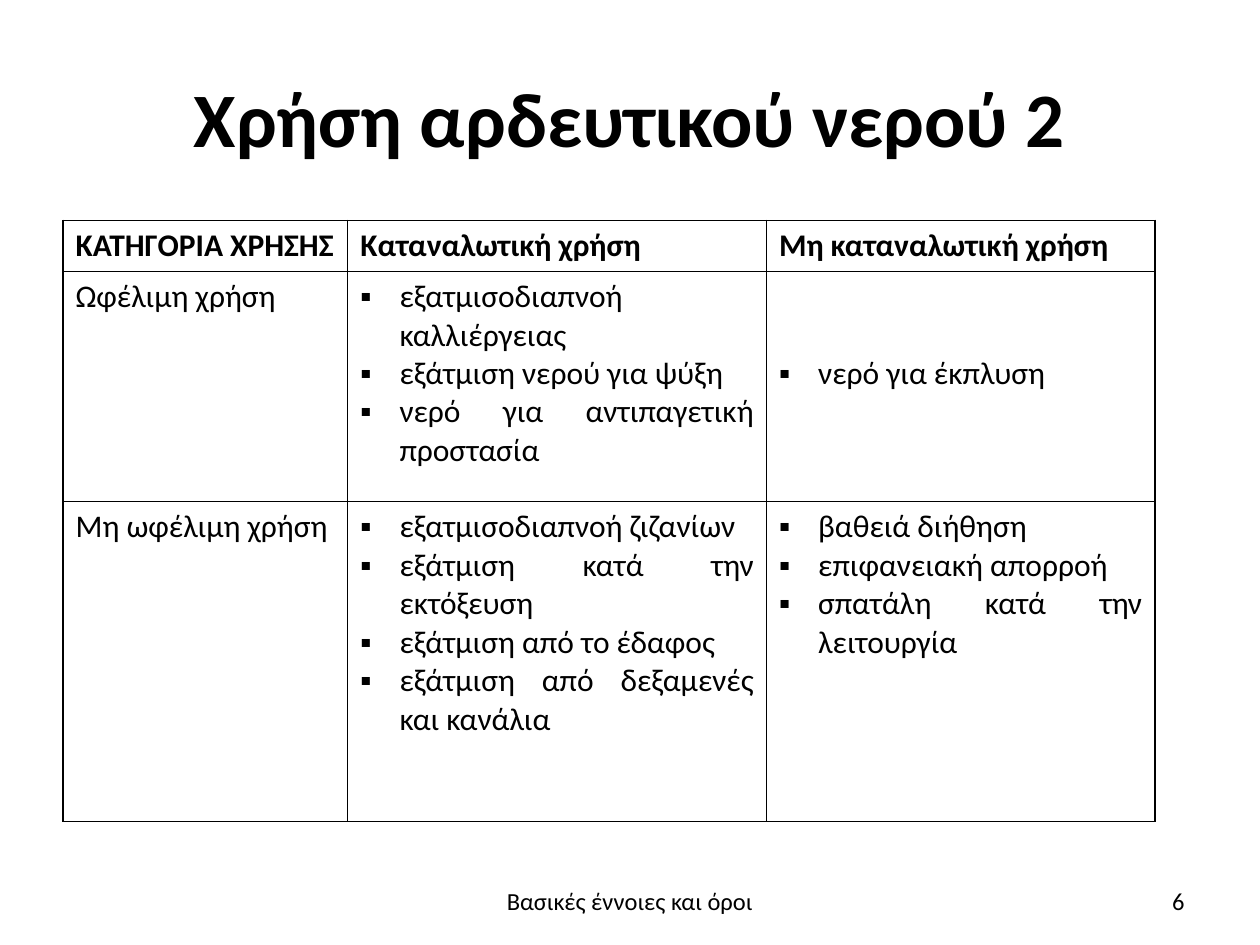
from lxml import etree
from pptx import Presentation
from pptx import util as u
from pptx.dml import color
from pptx.enum import text
from pptx.oxml import ns

ROWS = [
    [["ΚΑΤΗΓΟΡΙΑ ΧΡΗΣΗΣ"], ["Καταναλωτική χρήση"], ["Μη καταναλωτική χρήση"]],
    [["Ωφέλιμη χρήση"],
     ["εξατμισοδιαπνοή καλλιέργειας", "εξάτμιση νερού για ψύξη",
      "νερό για αντιπαγετική προστασία"],
     ["νερό για έκπλυση"]],
    [["Μη ωφέλιμη χρήση"],
     ["εξατμισοδιαπνοή ζιζανίων", "εξάτμιση κατά την εκτόξευση",
      "εξάτμιση από το έδαφος", "εξάτμιση από δεξαμενές και κανάλια"],
     ["βαθειά διήθηση", "επιφανειακή απορροή", "σπατάλη κατά την λειτουργία"]],
]
COLUMN_WIDTHS = [5.74, 8.44, 7.83]
ROW_HEIGHTS = [1.03, 4.64, 6.45]


def rgb(value):
    return color.RGBColor.from_string(value)


class SlideBuilder:
    font_name = "Calibri"
    ink = "000000"

    def __init__(self, presentation):
        self.slide = presentation.slides.add_slide(presentation.slide_layouts[5])

    def format_paragraph(self, paragraph, size, alignment, bold=False):
        paragraph.alignment = alignment
        for run in paragraph.runs:
            run.font.name = self.font_name
            run.font.size = u.Pt(size)
            run.font.bold = bold
            run.font.color.rgb = rgb(self.ink)

    def place(self, shape, left, top, width, height):
        shape.left, shape.top = u.Cm(left), u.Cm(top)
        shape.width, shape.height = u.Cm(width), u.Cm(height)

    def title(self, wording, *box):
        shape = self.slide.shapes.title
        self.place(shape, *box)
        shape.text_frame.text = wording
        shape.text_frame.vertical_anchor = text.MSO_ANCHOR.MIDDLE
        self.format_paragraph(shape.text_frame.paragraphs[0], 44,
                              text.PP_ALIGN.CENTER, bold=True)

    def label(self, wording, alignment, *box):
        shape = self.slide.shapes.add_textbox(*map(u.Cm, box))
        frame = shape.text_frame
        frame.word_wrap = True
        frame.vertical_anchor = text.MSO_ANCHOR.MIDDLE
        frame.text = wording
        self.format_paragraph(frame.paragraphs[0], 14, alignment)

    def bullet(self, paragraph):
        properties = paragraph._p.get_or_add_pPr()
        indent = u.Cm(0.79)
        properties.set("marL", str(indent))
        properties.set("indent", str(-indent))
        etree.SubElement(properties, ns.qn("a:buFont"), typeface=self.font_name)
        etree.SubElement(properties, ns.qn("a:buChar"), char="▪")

    def border(self, cell):
        properties = cell._tc.get_or_add_tcPr()
        for position, side in enumerate(("lnL", "lnR", "lnT", "lnB")):
            line = etree.Element(ns.qn("a:" + side), w=str(u.Pt(1)))
            fill = etree.SubElement(line, ns.qn("a:solidFill"))
            etree.SubElement(fill, ns.qn("a:srgbClr"), val=self.ink)
            properties.insert(position, line)

    def table(self, rows, left, top, widths, heights):
        frame = self.slide.shapes.add_table(
            len(rows), len(widths), u.Cm(left), u.Cm(top),
            u.Cm(sum(widths)), u.Cm(sum(heights)))
        table = frame.table
        table.horz_banding = False
        for column, width in zip(table.columns, widths):
            column.width = u.Cm(width)
        for row, height in zip(table.rows, heights):
            row.height = u.Cm(height)
        for row_index, row in enumerate(rows):
            for column_index, items in enumerate(row):
                cell = table.cell(row_index, column_index)
                cell.fill.background()
                self.border(cell)
                cell.text_frame.text = "\n".join(items)
                for paragraph in cell.text_frame.paragraphs:
                    self.format_paragraph(paragraph, 18, text.PP_ALIGN.JUSTIFY,
                                          bold=row_index == 0)
                    if row_index and column_index:
                        self.bullet(paragraph)
        return table


def main():
    presentation = Presentation()
    presentation.slide_width, presentation.slide_height = u.Cm(25.4), u.Cm(19.05)
    builder = SlideBuilder(presentation)

    # Title
    builder.title("Χρήση αρδευτικού νερού 2", 1.27, 0.76, 22.86, 3.18)

    # Table of water uses; the single flushing item sits two lines lower
    table = builder.table(ROWS, 1.27, 4.44, COLUMN_WIDTHS, ROW_HEIGHTS)
    table.cell(1, 2).margin_top = u.Cm(1.68)

    # Footer and slide number
    builder.label("Βασικές έννοιες και όροι", text.PP_ALIGN.CENTER,
                  8.68, 17.66, 8.04, 1.01)
    builder.label("6", text.PP_ALIGN.RIGHT, 18.2, 17.66, 5.93, 1.01)

    presentation.save("out.pptx")


if __name__ == "__main__":
    main()
